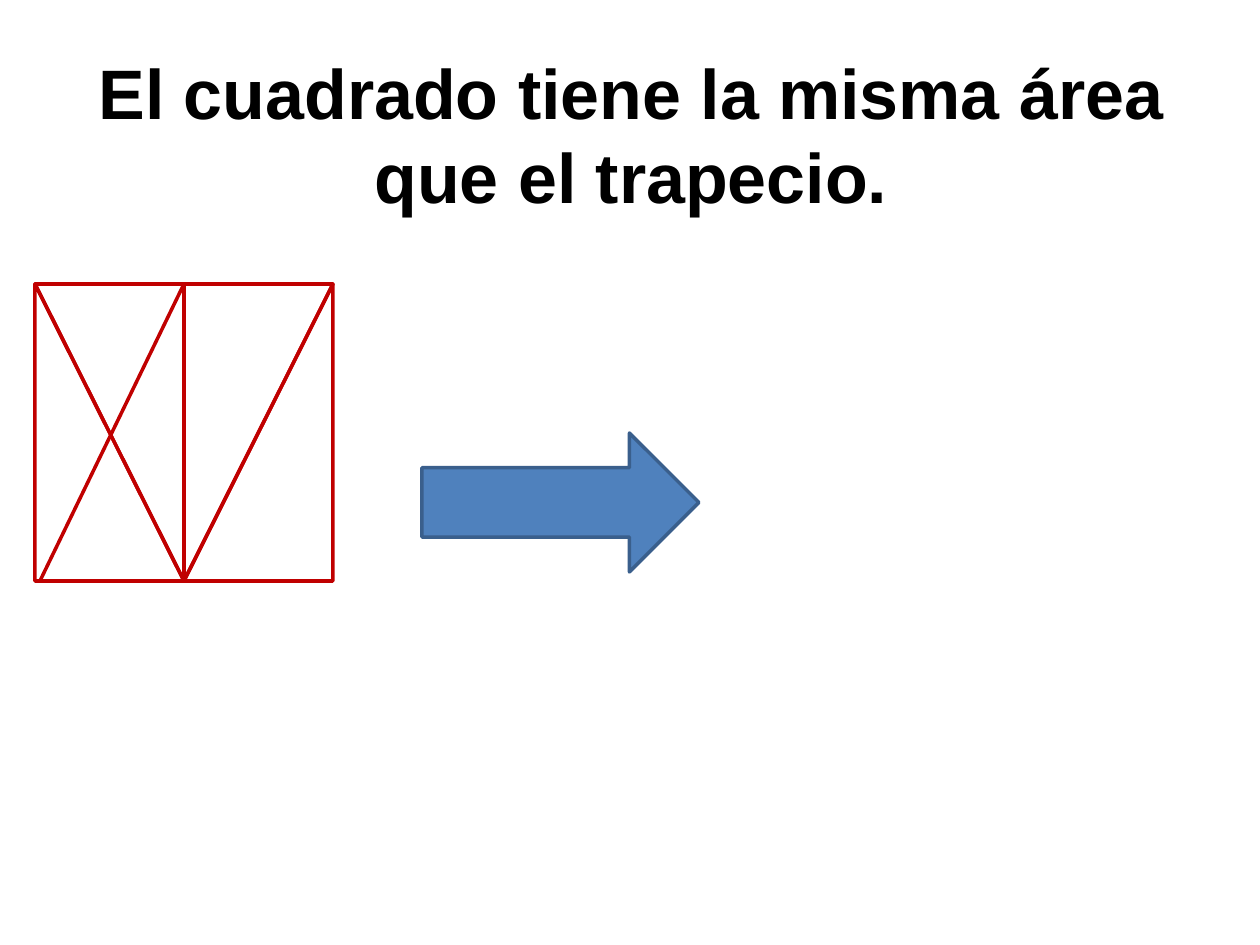
from pptx import Presentation
from pptx.dml.color import RGBColor
from pptx.enum.shapes import MSO_SHAPE
from pptx.enum.text import MSO_ANCHOR, MSO_AUTO_SIZE, PP_ALIGN
from pptx.util import Pt

PX = 914400 // 126  # EMU per pixel

TITLE = "El cuadrado tiene la misma área que el trapecio."
TITLE_BOX = (64, 55, 1134, 158)
ARROW_BOX = (422, 433, 277, 139)

# The square is cut into two halves, each covered by right triangles
SQUARE_LEFT, SQUARE_TOP, HALF_WIDTH, SQUARE_HEIGHT = 35, 284, 149, 297
MIDDLE = SQUARE_LEFT + HALF_WIDTH
INSET = 5
TRIANGLES = [  # left, width, rotation, mirrored
    (SQUARE_LEFT, HALF_WIDTH, 0, False),
    (SQUARE_LEFT + INSET, HALF_WIDTH - INSET, 0, True),
    (MIDDLE, HALF_WIDTH, 180, True),
    (MIDDLE, HALF_WIDTH, 0, True),
    (SQUARE_LEFT, HALF_WIDTH, 180, False),
]


def color(hex_string):
    return RGBColor.from_string(hex_string)


def emu(box):
    return [length * PX for length in box]


def add_outlined(slide, kind, box, line_color):
    shape = slide.shapes.add_shape(kind, *emu(box))
    shape.shadow.inherit = False
    shape.line.color.rgb = color(line_color)
    shape.line.width = Pt(2)
    return shape


presentation = Presentation()
presentation.slide_width = 1260 * PX
presentation.slide_height = 945 * PX
slide = presentation.slides.add_slide(presentation.slide_layouts[5])

# Arrow
arrow = add_outlined(slide, MSO_SHAPE.RIGHT_ARROW, ARROW_BOX, "3A5F8C")
arrow.fill.solid()
arrow.fill.fore_color.rgb = color("4F81BD")

# Square made of triangles
for left, width, rotation, mirrored in TRIANGLES:
    triangle = add_outlined(slide, MSO_SHAPE.RIGHT_TRIANGLE,
                            (left, SQUARE_TOP, width, SQUARE_HEIGHT), "C00000")
    triangle.fill.background()
    triangle.rotation = rotation
    if mirrored:
        triangle._element.spPr.xfrm.set("flipH", "1")

# Title
title = slide.shapes.title
title.left, title.top, title.width, title.height = emu(TITLE_BOX)
text_frame = title.text_frame
text_frame.text = TITLE
text_frame.word_wrap = True
text_frame.auto_size = MSO_AUTO_SIZE.NONE
text_frame.vertical_anchor = MSO_ANCHOR.MIDDLE
paragraph = text_frame.paragraphs[0]
paragraph.alignment = PP_ALIGN.CENTER
font = paragraph.runs[0].font
font.name, font.size, font.bold = "Arial", Pt(40), True
font.color.rgb = color("000000")

presentation.save("out.pptx")
